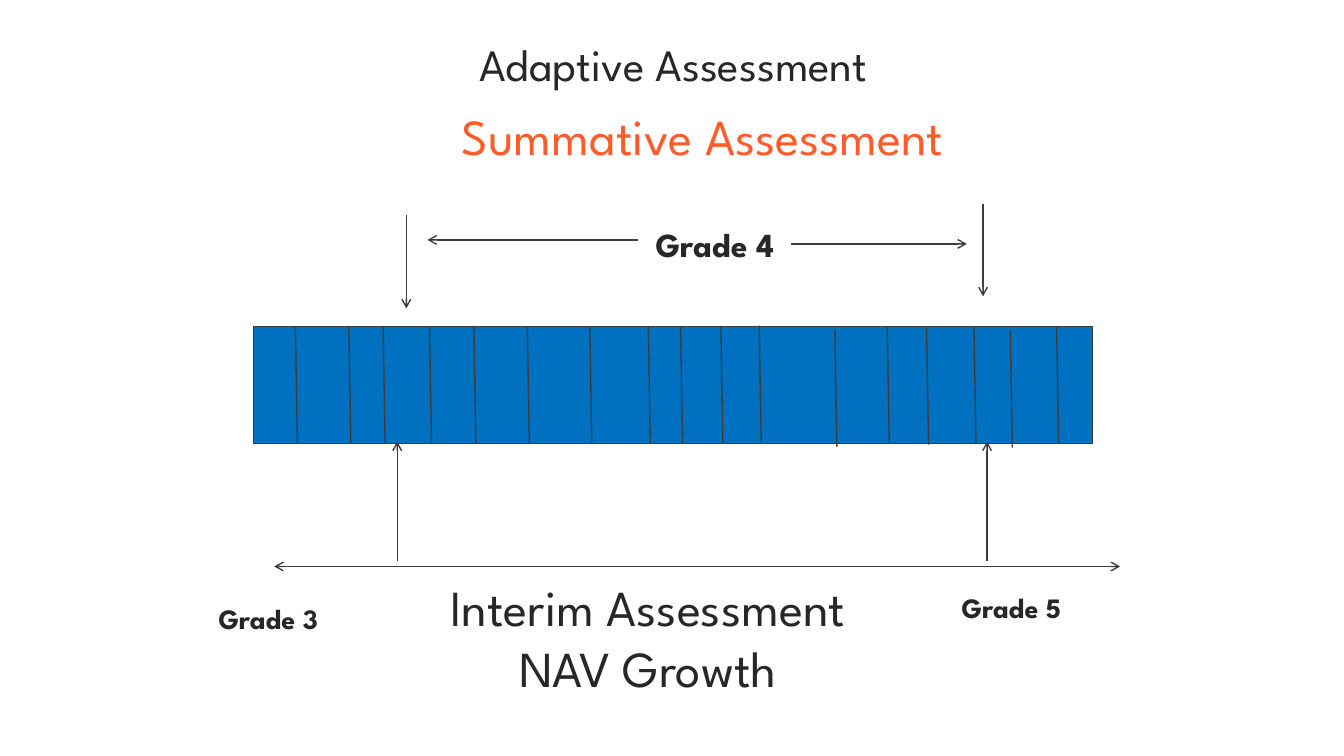
"""Build the adaptive assessment slide."""
import dataclasses
import typing

import pptx
import pptx.dml.color
import pptx.enum.shapes
import pptx.enum.text
import pptx.oxml
import pptx.oxml.ns
import pptx.util

PX = 9144
FONT = "League Spartan"
COLORS = {"ink": "272727", "line": "3D3D3D", "bar": "0070C0", "accent": "FF5C29"}
ALIGN = pptx.enum.text.PP_ALIGN


@dataclasses.dataclass
class Label:
    """Text with its place and look."""
    text: str
    box: tuple[int, int, int, int]
    size: int
    bold: bool = False
    align: typing.Any = ALIGN.CENTER
    color: str = "ink"


@dataclasses.dataclass
class Line:
    """Straight line with optional arrowheads."""
    start: tuple[int, int]
    end: tuple[int, int]
    tail: bool = True
    head: bool = False


BAR = (251, 324, 832, 116)
SLANT = 2
CUTS = [(293, 0), (346, 0), (380, 0), (426, 0), (470, 0), (523, 0),
        (585, 0), (643, 0), (675, 0), (715, 0), (753, -1), (828, 3),
        (880, 0), (919, 1), (966, 0), (1002, 4), (1048, 0)]
TITLE = Label("Summative Assessment", (247, 45, 900, 187), 36, color="accent")
LABELS = [
    Label("Grade 3", (207, 592, 203, 44), 20, True, ALIGN.LEFT),
    Label("Grade 5", (944, 581, 203, 44), 20, True, ALIGN.LEFT),
    Label("Grade 4", (442, 217, 534, 50), 24, True),
    Label("Interim Assessment\nNAV Growth", (375, 567, 535, 131), 36),
    Label("Adaptive Assessment", (275, 32, 786, 64), 32),
]
ARROWS = [
    Line((394, 557), (394, 438)),
    Line((979, 557), (979, 438)),
    Line((975, 202), (975, 294)),
    Line((403, 213), (403, 306)),
    Line((633, 238), (424, 238)),
    Line((785, 242), (959, 242)),
    Line((272, 562), (1111, 562), head=True),
]


def tint(name: str) -> pptx.dml.color.RGBColor:
    """Return a named colour."""
    return pptx.dml.color.RGBColor.from_string(COLORS[name])


def scale(*vals: int) -> list[int]:
    """Turn px into EMU."""
    return [val * PX for val in vals]


def write(shape: typing.Any, label: Label) -> None:
    """Fill a shape with styled text."""
    frame = shape.text_frame
    frame.text = label.text
    frame.word_wrap = True
    for para in frame.paragraphs:
        para.alignment = label.align
        for run in para.runs:
            font = run.font
            font.name, font.size = FONT, pptx.util.Pt(label.size)
            font.bold = label.bold
            font.color.rgb = tint(label.color)


def draw_line(slide: typing.Any, line: Line) -> None:
    """Draw one line and its arrowheads."""
    link = slide.shapes.add_connector(
        pptx.enum.shapes.MSO_CONNECTOR.STRAIGHT, *scale(*line.start, *line.end))
    link.line.color.rgb = tint("line")
    link.line.width = pptx.util.Pt(1)
    props = link.line._get_or_add_ln()
    for tag, shown in (("headEnd", line.head), ("tailEnd", line.tail)):
        if shown:
            space = pptx.oxml.ns.nsdecls("a")
            props.append(pptx.oxml.parse_xml(f'<a:{tag} {space} type="arrow"/>'))
    root = link._element.spPr
    root.append(root.makeelement(pptx.oxml.ns.qn("a:effectLst")))


def draw_title(slide: typing.Any) -> None:
    """Place and style the title."""
    title = slide.shapes.title
    title.left, title.top, title.width, title.height = scale(*TITLE.box)
    write(title, TITLE)
    frame = title.text_frame
    frame.auto_size = pptx.enum.text.MSO_AUTO_SIZE.NONE
    frame.vertical_anchor = pptx.enum.text.MSO_ANCHOR.MIDDLE
    frame.paragraphs[0].line_spacing = 0.9


def draw_bar(slide: typing.Any) -> None:
    """Draw the bar and its slanted cuts."""
    bar = slide.shapes.add_shape(
        pptx.enum.shapes.MSO_SHAPE.RECTANGLE, *scale(*BAR))
    bar.shadow.inherit = False
    bar.fill.solid()
    bar.fill.fore_color.rgb = tint("bar")
    bar.line.color.rgb = tint("line")
    bar.line.width = pptx.util.Pt(0.5)
    top, high = BAR[1], BAR[3]
    for left, drop in CUTS:
        draw_line(slide, Line((left, top + drop),
                              (left + SLANT, top + drop + high), tail=False))


def main() -> None:
    """Build and save the slide."""
    deck = pptx.Presentation()
    deck.slide_width, deck.slide_height = scale(1333, 750)
    slide = deck.slides.add_slide(deck.slide_layouts[5])
    draw_title(slide)
    draw_bar(slide)
    for arrow in ARROWS:
        draw_line(slide, arrow)
    for label in LABELS:
        box = slide.shapes.add_textbox(*scale(*label.box))
        write(box, label)
    deck.save("out.pptx")


if __name__ == "__main__":
    main()
